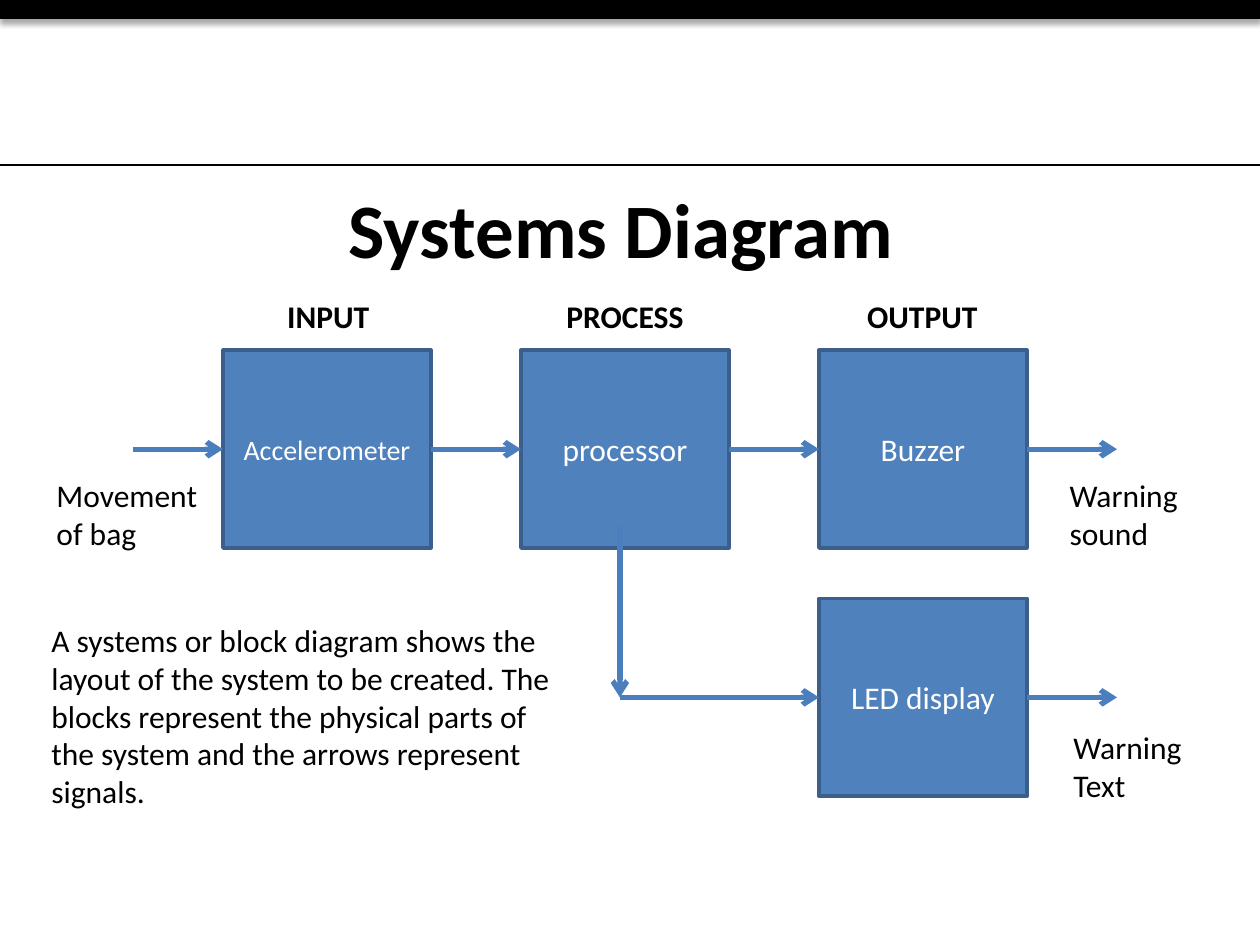
import pptx
import pptx.util
import pptx.dml.color
import pptx.enum.shapes
import pptx.enum.text
import pptx.oxml
import pptx.oxml.ns

COLORS = {
    "black": "000000",
    "white": "FFFFFF",
    "block": "4F81BD",
    "block_edge": "3A5F8C",
    "arrow": "4B7EBC",
}
FONT = "Calibri"
SLIDE_WIDTH, SLIDE_HEIGHT = 10, 7.5
BLOCK_WIDTH, BLOCK_HEIGHT = 1.65, 1.57
GRID_LEFT, GRID_TOP = 1.77, 2.78
COLUMN_STEP, ROW_STEP = 2.365, 1.97
ARROW_LENGTH = COLUMN_STEP - BLOCK_WIDTH
LEFT_SIDE, RIGHT_SIDE = 1, 3

ALIGN = pptx.enum.text.PP_ALIGN
ANCHOR = pptx.enum.text.MSO_ANCHOR
RECTANGLE = pptx.enum.shapes.MSO_SHAPE.RECTANGLE


def inches(*lengths):
    return [pptx.util.Inches(length) for length in lengths]


def color(name):
    return pptx.dml.color.RGBColor.from_string(COLORS[name])


def write_text(shape, text, size=18, bold=False, name="black",
               align=ALIGN.LEFT, anchor=ANCHOR.TOP):
    frame = shape.text_frame
    frame.word_wrap = True
    frame.vertical_anchor = anchor
    frame.text = text
    for paragraph in frame.paragraphs:
        paragraph.alignment = align
        paragraph.font.name = FONT
        paragraph.font.size = pptx.util.Pt(size)
        paragraph.font.bold = bold
        paragraph.font.color.rgb = color(name)


def add_label(slide, text, box, **text_format):
    label = slide.shapes.add_textbox(*inches(*box))
    write_text(label, text, **text_format)


def add_rectangle(slide, box, fill, edge, edge_width):
    shape = slide.shapes.add_shape(RECTANGLE, *inches(*box))
    shape.shadow.inherit = False
    shape.fill.solid()
    shape.fill.fore_color.rgb = color(fill)
    shape.line.color.rgb = color(edge)
    shape.line.width = pptx.util.Pt(edge_width)
    return shape


def add_block(slide, text, column, row, size=18):
    box = (GRID_LEFT + column * COLUMN_STEP, GRID_TOP + row * ROW_STEP,
           BLOCK_WIDTH, BLOCK_HEIGHT)
    block = add_rectangle(slide, box, "block", "block_edge", 2)
    write_text(block, text, size=size, name="white",
               align=ALIGN.CENTER, anchor=ANCHOR.MIDDLE)
    return block


def add_line(slide, start, end, name, width):
    line = slide.shapes.add_connector(
        pptx.enum.shapes.MSO_CONNECTOR.STRAIGHT, *inches(*start, *end))
    line.line.color.rgb = color(name)
    line.line.width = pptx.util.Pt(width)
    pptx.oxml.ns.qn("a:effectLst")
    line._element.spPr.append(pptx.oxml.parse_xml(
        f"<a:effectLst {pptx.oxml.ns.nsdecls('a')}/>"))
    return line


def add_arrow(slide, start, end, source=None, target=None):
    arrow = add_line(slide, start, end, "arrow", 3)
    arrow.line._get_or_add_ln().append(pptx.oxml.parse_xml(
        f"<a:tailEnd {pptx.oxml.ns.nsdecls('a')} type='arrow'/>"))
    if source is not None:
        arrow.begin_connect(source, RIGHT_SIDE)
    if target is not None:
        arrow.end_connect(target, LEFT_SIDE)


def add_header(slide):
    bar = add_rectangle(slide, (0, 0, SLIDE_WIDTH, 0.15), "black", "black", 0.75)
    effects = bar._element.spPr.find(pptx.oxml.ns.qn("a:effectLst"))
    effects.append(pptx.oxml.parse_xml(
        f"<a:outerShdw {pptx.oxml.ns.nsdecls('a')} blurRad='{pptx.util.Pt(3.1)}' "
        f"dist='{pptx.util.Pt(1.8)}' dir='5400000' rotWithShape='0'>"
        f"<a:srgbClr val='{COLORS['black']}'><a:alpha val='35000'/></a:srgbClr>"
        "</a:outerShdw>"))
    add_line(slide, (0, 1.31), (SLIDE_WIDTH, 1.31), "black", 1.5)


def add_title(slide, text):
    title = slide.shapes.title
    title.left, title.top, title.width, title.height = inches(0.43, 1.39, 9, 0.63)
    write_text(title, text, size=44, bold=True, align=ALIGN.CENTER)
    title.text_frame.auto_size = pptx.enum.text.MSO_AUTO_SIZE.NONE


def add_signals(slide, accelerometer, processor, buzzer, display):
    first_row = GRID_TOP + BLOCK_HEIGHT / 2
    second_row = first_row + ROW_STEP
    right_edge = GRID_LEFT + 2 * COLUMN_STEP + BLOCK_WIDTH
    branch = 4.92

    add_arrow(slide, (GRID_LEFT - ARROW_LENGTH, first_row),
              (GRID_LEFT, first_row), target=accelerometer)
    for source, target in ((accelerometer, processor), (processor, buzzer)):
        add_arrow(slide, (0, 0), (1, 1), source, target)
    for source, middle in ((buzzer, first_row), (display, second_row)):
        add_arrow(slide, (right_edge, middle),
                  (right_edge + ARROW_LENGTH, middle), source=source)
    add_arrow(slide, (branch, 4.18), (branch, second_row))
    add_arrow(slide, (branch, second_row),
              (GRID_LEFT + 2 * COLUMN_STEP, second_row), target=display)


def add_labels(slide):
    for text, left, width in (("INPUT", 2.17, 0.87),
                              ("PROCESS", 4.37, 1.18),
                              ("OUTPUT", 6.65, 1.34)):
        add_label(slide, text, (left, 2.31, width, 0.4),
                  bold=True, align=ALIGN.CENTER)
    add_label(slide, "Movement of bag", (0.35, 3.73, 1.34, 0.71))
    add_label(slide, "Warning\nsound", (8.39, 3.73, 1.45, 0.71))
    add_label(slide, "Warning Text", (8.42, 5.73, 1.42, 0.71))
    add_label(slide, "A systems or block diagram shows the layout of the system "
              "to be created. The blocks represent the physical parts of the "
              "system and the arrows represent signals.",
              (0.31, 4.88, 4.33, 1.62))


def main():
    presentation = pptx.Presentation()
    presentation.slide_width, presentation.slide_height = inches(
        SLIDE_WIDTH, SLIDE_HEIGHT)
    slide = presentation.slides.add_slide(presentation.slide_layouts[5])

    add_header(slide)
    add_title(slide, "Systems Diagram")
    accelerometer = add_block(slide, "Accelerometer", 0, 0, size=16)
    processor = add_block(slide, "processor", 1, 0)
    buzzer = add_block(slide, "Buzzer", 2, 0)
    display = add_block(slide, "LED display", 2, 1)
    add_signals(slide, accelerometer, processor, buzzer, display)
    add_labels(slide)

    presentation.save("out.pptx")


if __name__ == "__main__":
    main()
